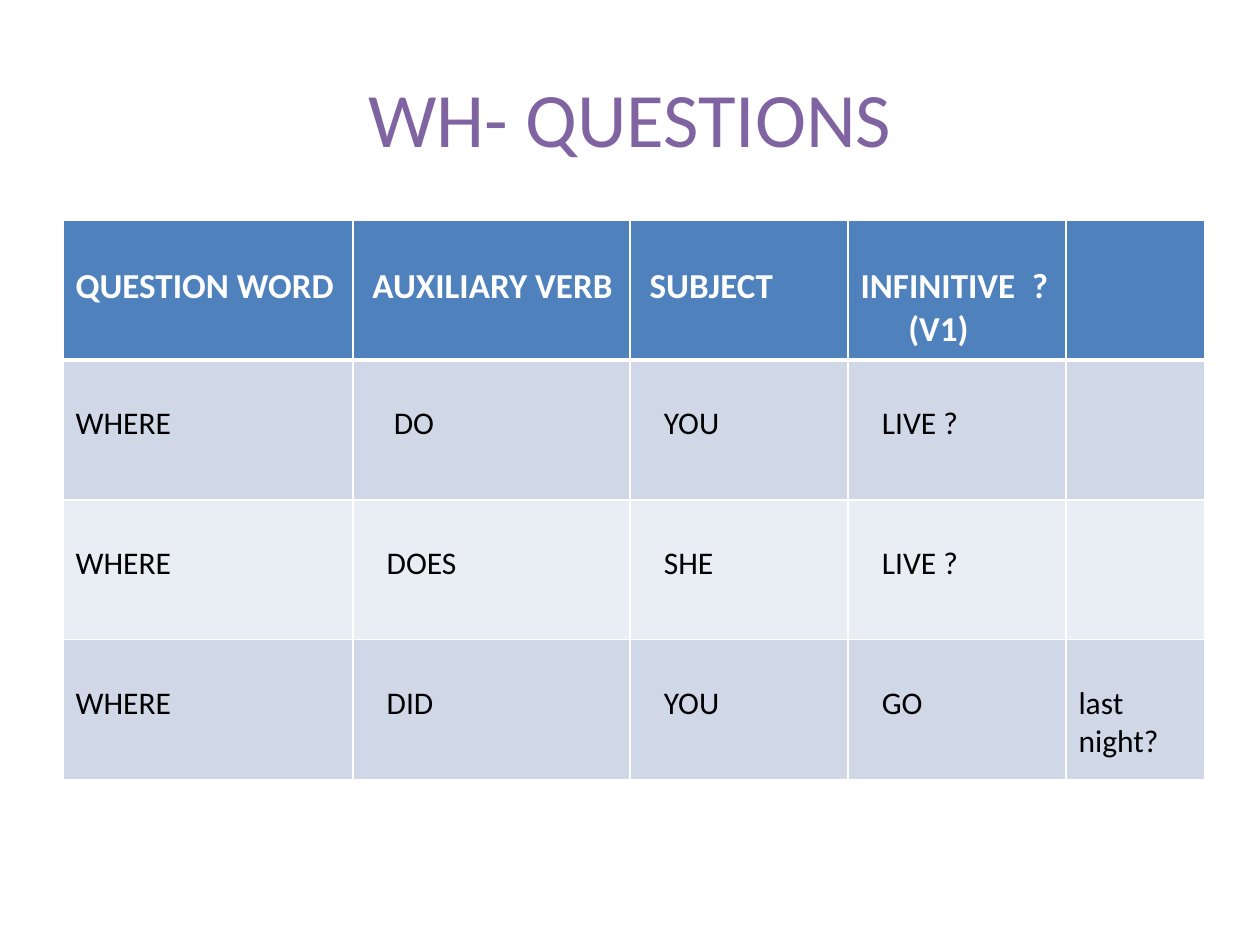
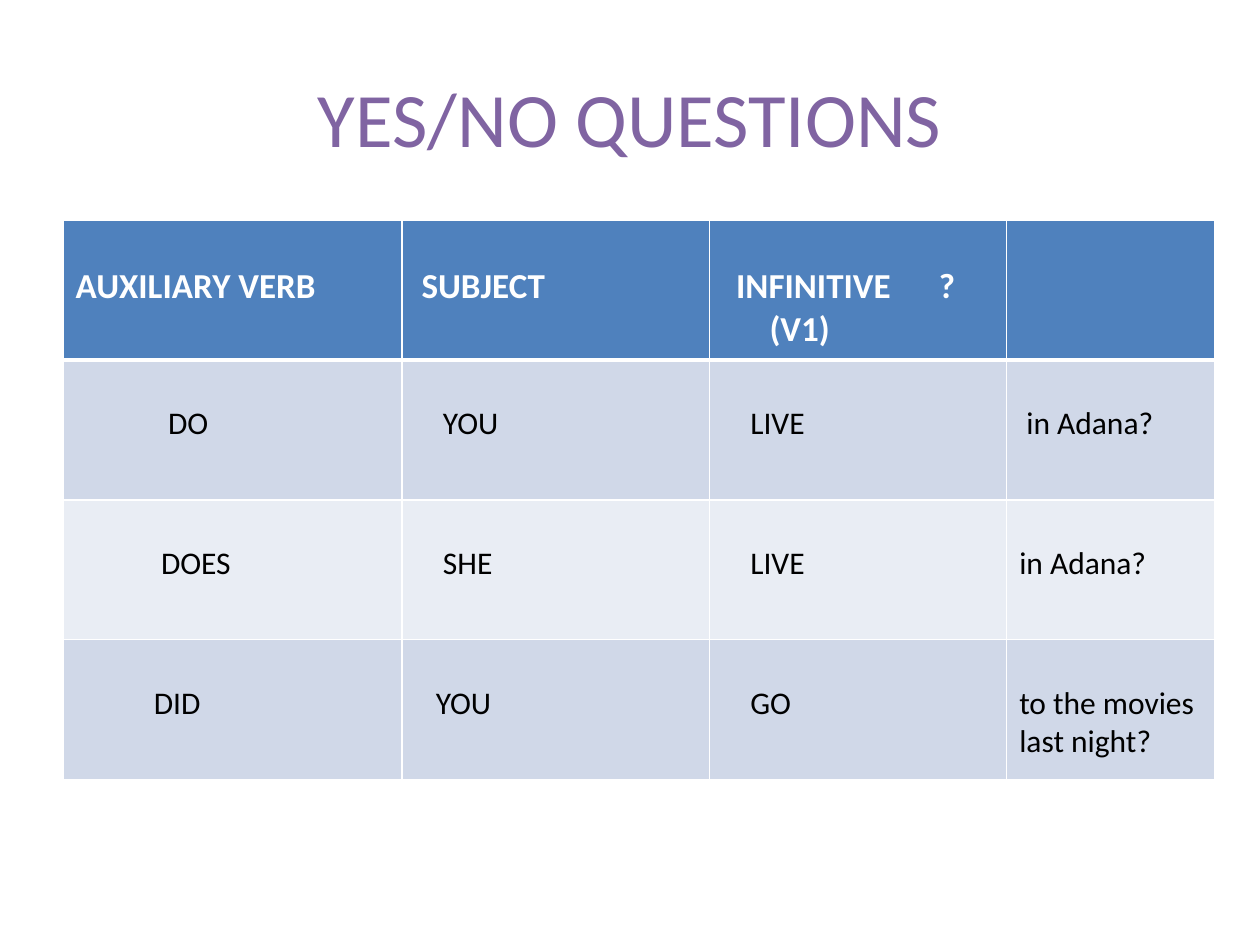
import pptx
import pptx.util
import pptx.dml.color
import pptx.enum.text
import pptx.oxml.ns
from lxml import etree

FONT = "Calibri"
TITLE, HEADER, WHITE, BLACK = "8064A2", "4F81BD", "FFFFFF", "000000"
BANDS = ("D0D8E8", "E9EDF4")
SLIDE_W, SLIDE_H = 10, 7.5
TITLE_BOX = (0.05, 0.04, 0.9, 0.167)  # shares of the slide: left, top, width, height
TABLE_LEFT, TABLE_TOP, TABLE_H = 0.05, 0.233, 0.592
MARGIN, TOP_MARGIN = 0.1, 0.355
STEP = 0.0565  # one unit of indent, in inches

# A cell is (indent, line, ...); a line may be (extra indent, text).
WH_ROWS = [
    [(0, "QUESTION WORD"), (1, "AUXILIARY VERB"), (1, "SUBJECT"),
     (0, "INFINITIVE\t?", (6.7, "(V1)")), None],
    [(0, "WHERE"), (4, "DO"), (3, "YOU"), (3, "LIVE ?"), None],
    [(0, "WHERE"), (3, "DOES"), (3, "SHE"), (3, "LIVE ?"), None],
    [(0, "WHERE"), (3, "DID"), (3, "YOU"), (3, "GO"), (0, "last night?")],
]
YES_NO_ROWS = [
    [(0, "AUXILIARY VERB"), (1, "SUBJECT"),
     (2, "INFINITIVE\t?", (4.7, "(V1)")), None],
    [(13, "DO"), (4, "YOU"), (4, "LIVE"), (1, "in Adana?")],
    [(12, "DOES"), (4, "SHE"), (4, "LIVE"), (0, "in Adana?")],
    [(11, "DID"), (3, "YOU"), (4, "GO"), (0, "to the movies last night?")],
]


def rgb(color):
    return pptx.dml.color.RGBColor.from_string(color)


def add_run(p, text, size, color, bold=False):
    r = p.add_run()
    r.text = text
    r.font.name, r.font.size, r.font.bold = FONT, pptx.util.Pt(size), bold
    r.font.color.rgb = rgb(color)


def add_title(s, text):
    sp = s.shapes.title
    left, top, width, height = TITLE_BOX
    sp.left, sp.width = (pptx.util.Inches(v * SLIDE_W) for v in (left, width))
    sp.top, sp.height = (pptx.util.Inches(v * SLIDE_H) for v in (top, height))
    tf = sp.text_frame
    tf.vertical_anchor = pptx.enum.text.MSO_ANCHOR.MIDDLE
    p = tf.paragraphs[0]
    p.alignment = pptx.enum.text.PP_ALIGN.CENTER
    add_run(p, text, 44, TITLE)


def add_child(parent, tag, **attributes):
    return etree.SubElement(parent, pptx.oxml.ns.qn(tag), **attributes)


def style_cell(cell, row):
    """Draw white borders, thicker below the header, then the row's fill."""
    tc_pr = cell._tc.get_or_add_tcPr()
    for side in "LRTB":
        thick = (row, side) in ((0, "B"), (1, "T"))
        ln = add_child(tc_pr, f"a:ln{side}", w=str(pptx.util.Pt(3 if thick else 1)))
        add_child(add_child(ln, "a:solidFill"), "a:srgbClr", val=WHITE)
    cell.fill.solid()
    cell.fill.fore_color.rgb = rgb(BANDS[(row - 1) % 2] if row else HEADER)


def fill_cell(cell, content, header, tab):
    indent, *lines = content
    cell.margin_left = pptx.util.Inches(MARGIN + indent * STEP)
    cell.margin_top = pptx.util.Inches(TOP_MARGIN)
    tf = cell.text_frame
    for i, line in enumerate(lines):
        p = tf.add_paragraph() if i else tf.paragraphs[0]
        extra, text = line if isinstance(line, tuple) else (0, line)
        p_pr = p._p.get_or_add_pPr()
        if extra:
            p_pr.set("marL", str(pptx.util.Inches(extra * STEP)))
        if "\t" in text:
            stops = add_child(p_pr, "a:tabLst")
            add_child(stops, "a:tab", pos=str(pptx.util.Inches(tab)), algn="l")
        add_run(p, text, 20 if header else 18, WHITE if header else BLACK, header)


def add_question_table(s, rows, widths, tab):
    frame = s.shapes.add_table(
        len(rows), len(widths),
        pptx.util.Inches(TABLE_LEFT * SLIDE_W), pptx.util.Inches(TABLE_TOP * SLIDE_H),
        pptx.util.Inches(sum(widths)), pptx.util.Inches(TABLE_H * SLIDE_H))
    table = frame.table
    for column, width in zip(table.columns, widths):
        column.width = pptx.util.Inches(width)
    for i, row in enumerate(rows):
        for j, content in enumerate(row):
            cell = table.cell(i, j)
            style_cell(cell, i)
            if content:
                fill_cell(cell, content, i == 0, tab)


def add_question_slide(prs, title, rows, widths, tab):
    s = prs.slides.add_slide(prs.slide_layouts[5])
    add_title(s, title)
    add_question_table(s, rows, widths, tab)


def main():
    prs = pptx.Presentation()
    prs.slide_width = pptx.util.Inches(SLIDE_W)
    prs.slide_height = pptx.util.Inches(SLIDE_H)
    add_question_slide(prs, "WH- QUESTIONS", WH_ROWS, (2.3, 2.2, 1.73, 1.73, 1.1), 1.36)
    add_question_slide(prs, "YES/NO QUESTIONS", YES_NO_ROWS, (2.69, 2.44, 2.36, 1.65), 1.61)
    prs.save("out.pptx")


if __name__ == "__main__":
    main()
